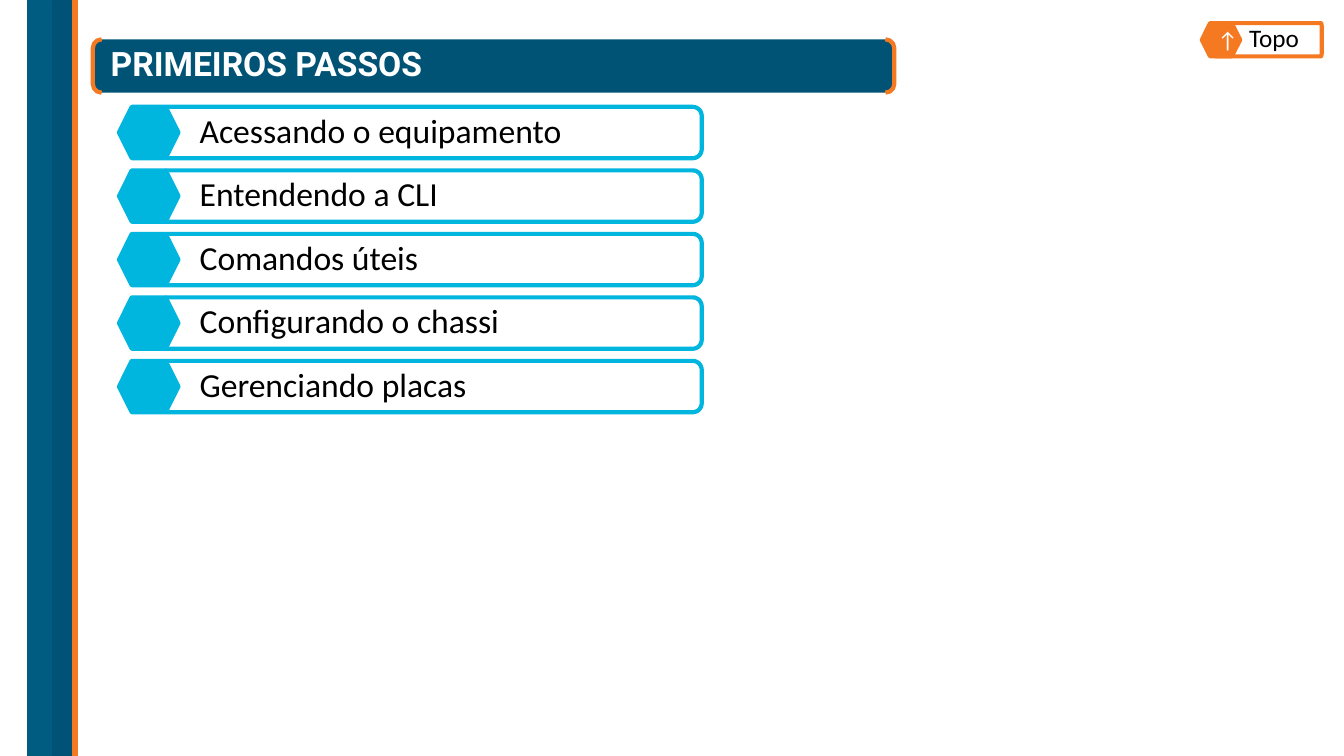
from math import cos, pi, sin

from lxml.etree import SubElement
from pptx import Presentation
from pptx.dml.color import RGBColor
from pptx.enum.shapes import MSO_SHAPE as Preset
from pptx.enum.text import MSO_ANCHOR as Anchor, PP_ALIGN as Align
from pptx.oxml.ns import qn
from pptx.util import Pt

PX = 9144
WIDTH, HEIGHT = 1333, 750

WHITE = RGBColor(0xFF, 0xFF, 0xFF)
BLACK = RGBColor(0x00, 0x00, 0x00)
ORANGE = RGBColor(0xF4, 0x79, 0x20)
CYAN = RGBColor(0x00, 0xB5, 0xDE)
TITLE_BLUE = RGBColor(0x00, 0x53, 0x74)
BAND_BLUE = RGBColor(0x00, 0x5C, 0x80)
BAND_EDGE = RGBColor(0x00, 0x5D, 0x7E)
STRIPE_BLUE = RGBColor(0x00, 0x52, 0x76)
STRIPE_EDGE = RGBColor(0x00, 0x52, 0x74)

TOPICS = [
    "Acessando o equipamento",
    "Entendendo a CLI",
    "Comandos úteis",
    "Configurando o chassi",
    "Gerenciando placas",
]


def px(*lengths):
    return [round(length * PX) for length in lengths]


def paint(shape, fill, line, weight):
    shape.shadow.inherit = False
    shape.fill.solid()
    shape.fill.fore_color.rgb = fill
    shape.line.color.rgb = line
    shape.line.width = Pt(weight)


def add_preset(slide, preset, box, fill, line, weight):
    shape = slide.shapes.add_shape(preset, *px(*box))
    paint(shape, fill, line, weight)
    return shape


def write(shape, text, color, font, frame=None, spacing=1.0, align=Align.LEFT):
    text_frame = shape.text_frame
    frame = {"word_wrap": True, "vertical_anchor": Anchor.MIDDLE, **(frame or {})}
    for name, value in frame.items():
        setattr(text_frame, name, value)
    paragraph = text_frame.paragraphs[0]
    paragraph.text = text
    paragraph.alignment = align
    paragraph.line_spacing = spacing
    for name, value in font.items():
        setattr(paragraph.font, name, value)
    paragraph.font.color.rgb = color


def add_side_bands(slide, box):
    left, top, width, height = box
    for offset, band, fill, line in [
        (0, 45, BAND_BLUE, BAND_EDGE),
        (25, 20, STRIPE_BLUE, STRIPE_EDGE),
        (45, width - 45, ORANGE, ORANGE),
    ]:
        add_preset(slide, Preset.RECTANGLE, (left + offset, top, band, height), fill, line, 1)


def add_title(slide, box, text):
    left, top, width, height = box
    add_preset(slide, Preset.DOUBLE_BRACKET, box, TITLE_BLUE, ORANGE, 3)
    title = slide.shapes.add_textbox(*px(left + 8, top, width - 8, height))
    font = {"name": "Roboto", "size": Pt(24), "bold": True}
    write(title, text, WHITE, font, spacing=0.9)


def add_plate(slide, box, radius_x, radius_y, color):
    left, top, width, height = box
    right, bottom = left + width, top + height
    steps = 8
    angles = [step * pi / 2 / steps for step in range(steps + 1)]
    upper = [(right - radius_x + radius_x * sin(angle),
              top + radius_y - radius_y * cos(angle)) for angle in angles]
    lower = [(x, top + bottom - y) for x, y in reversed(upper)]
    outline = [px(*point) for point in upper + lower + [(left, bottom)]]
    builder = slide.shapes.build_freeform(*px(left, top))
    builder.add_line_segments(outline, close=True)
    plate = builder.convert_to_shape()
    paint(plate, WHITE, color, 3)
    fill_color = plate._element.spPr.find(qn("a:solidFill"))[0]
    SubElement(fill_color, qn("a:alpha"), val="90000")
    return plate


def add_button(slide, box, text, color, size, badge_width, overlap, radius, symbol=None):
    left, top, width, height = box
    plate_left = left + badge_width - overlap
    plate_box = (plate_left, top, left + width - plate_left, height)
    plate = add_plate(slide, plate_box, *radius, color)
    margins = dict(zip(("margin_left", "margin_top", "margin_right", "margin_bottom"),
                       px(33, 7, 7, 7)))
    write(plate, text, BLACK, {"name": "Calibri", "size": Pt(size)}, margins, 0.9)
    badge = add_preset(slide, Preset.HEXAGON, (left, top, badge_width, height), color, color, 3)
    if symbol:
        font = {"name": "Calibri", "size": Pt(16)}
        write(badge, symbol, WHITE, font, align=Align.CENTER)


def add_topics(slide, box, topics):
    left, top, width, height = box
    row = 51
    pitch = (height - row) / (len(topics) - 1)
    for index, topic in enumerate(topics):
        row_box = (left, top + index * pitch, width, row)
        add_button(slide, row_box, topic, CYAN, 24, 59, 12, (9, 9))


def main():
    presentation = Presentation()
    presentation.slide_width, presentation.slide_height = px(WIDTH, HEIGHT)
    slide = presentation.slides.add_slide(presentation.slide_layouts[6])
    add_title(slide, (92, 39, 795, 53), "PRIMEIROS PASSOS")
    add_side_bands(slide, (27, 0, 50, HEIGHT))
    add_topics(slide, (118, 106, 578, 303), TOPICS)
    add_button(slide, (1192, 23, 119, 33), "Topo", ORANGE, 18, 38, 24, (1, 5), "↑")
    presentation.save("out.pptx")


if __name__ == "__main__":
    main()
